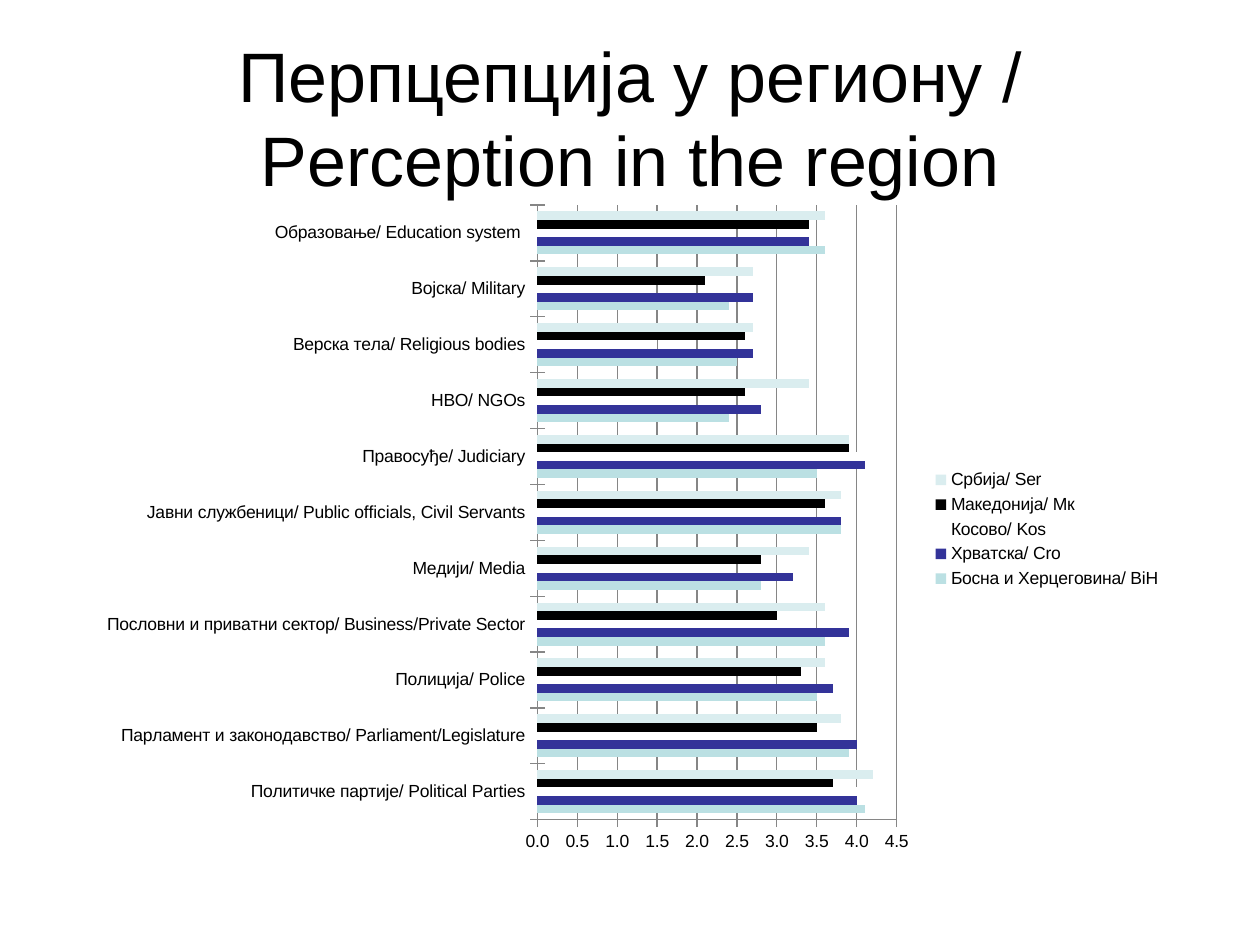
import pptx
import pptx.chart.data
import pptx.dml.color
import pptx.enum.chart
import pptx.enum.text
import pptx.oxml
import pptx.util

Pt = pptx.util.Pt
FONT = "Arial"
BLACK = "000000"
GRAY = "868686"

INSTITUTIONS = [
    "Политичке партије/ Political Parties",
    "Парламент и законодавство/ Parliament/Legislature",
    "Полиција/ Police",
    "Пословни и приватни сектор/ Business/Private Sector",
    "Mедији/ Media",
    "Јавни службеници/ Public officials, Civil Servants",
    "Правосуђе/ Judiciary",
    "НВО/ NGOs",
    "Верска тела/ Religious bodies",
    "Војска/ Military",
    "Образовање/ Education system ",
]
COUNTRIES = [
    ("Босна и Херцеговина/ BiH", "BBE0E3", [4.1, 3.9, 3.5, 3.6, 2.8, 3.8, 3.5, 2.4, 2.5, 2.4, 3.6]),
    ("Хрватска/ Cro", "333399", [4, 4, 3.7, 3.9, 3.2, 3.8, 4.1, 2.8, 2.7, 2.7, 3.4]),
    ("Косово/ Kos", "FFFFFF", [4.2, 3.9, 2.4, 3.3, 2.3, 3.2, 4.1, 1.8, 1.5, 1.3, 2.4]),
    ("Македонија/ Mк", "000000", [3.7, 3.5, 3.3, 3, 2.8, 3.6, 3.9, 2.6, 2.6, 2.1, 3.4]),
    ("Србија/ Ser", "DAEDEF", [4.2, 3.8, 3.6, 3.6, 3.4, 3.8, 3.9, 3.4, 2.7, 2.7, 3.6]),
]


def color(value):
    """Return the colour for a hex string."""
    return pptx.dml.color.RGBColor.from_string(value)


def style_font(font, size):
    """Set the shared typeface and colour at the given size."""
    font.name = FONT
    font.size = Pt(size)
    font.bold = False
    font.color.rgb = color(BLACK)


def add_title(page, left, top, width, height):
    """Place the centred slide title in the given box."""
    box = page.shapes.add_textbox(Pt(left), Pt(top), Pt(width), Pt(height))
    frame = box.text_frame
    frame.word_wrap = True
    frame.vertical_anchor = pptx.enum.text.MSO_ANCHOR.MIDDLE
    frame.text = "Перпцепција у региону / Perception in the region"
    para = frame.paragraphs[0]
    para.alignment = pptx.enum.text.PP_ALIGN.CENTER
    style_font(para.runs[0].font, 40)


def set_plot_layout(chart, x, y, width, height):
    """Fix the inner plot area as fractions of the chart box."""
    plot_area = chart.element.chart.plotArea
    for old in plot_area.xpath("c:layout"):
        plot_area.remove(old)
    sizes = zip("xywh", (x, y, width, height))
    parts = "".join(f'<c:{name} val="{size}"/>' for name, size in sizes)
    plot_area.insert(0, pptx.oxml.parse_xml(
        '<c:layout xmlns:c="http://schemas.openxmlformats.org/drawingml/2006/chart">'
        '<c:manualLayout><c:layoutTarget val="inner"/>'
        '<c:xMode val="edge"/><c:yMode val="edge"/>'
        f"{parts}</c:manualLayout></c:layout>"))


def add_perception_chart(page, left, top, width, height):
    """Place the clustered bar chart of institutions by country."""
    data = pptx.chart.data.CategoryChartData(number_format="0.0")
    data.categories = INSTITUTIONS
    for name, _, values in COUNTRIES:
        data.add_series(name, values)
    chart = page.shapes.add_chart(
        pptx.enum.chart.XL_CHART_TYPE.BAR_CLUSTERED,
        Pt(left), Pt(top), Pt(width), Pt(height), data).chart
    style_font(chart.font, 10)
    chart.has_title = False
    chart.has_legend = True
    chart.legend.position = pptx.enum.chart.XL_LEGEND_POSITION.RIGHT
    chart.legend.include_in_layout = False

    plot = chart.plots[0]
    plot.vary_by_categories = False
    plot.gap_width = 150
    for series, (_, fill, _) in zip(plot.series, COUNTRIES):
        series.format.fill.solid()
        series.format.fill.fore_color.rgb = color(fill)
        series.invert_if_negative = False

    scale = chart.value_axis
    scale.minimum_scale, scale.maximum_scale, scale.major_unit = 0, 4.5, 0.5
    scale.has_major_gridlines = True
    scale.tick_labels.number_format = "0.0"
    scale.tick_labels.number_format_is_linked = False
    for axis in (chart.category_axis, scale):
        axis.major_tick_mark = pptx.enum.chart.XL_TICK_MARK.CROSS
        axis.minor_tick_mark = pptx.enum.chart.XL_TICK_MARK.NONE
    for item in (chart.category_axis, scale, scale.major_gridlines):
        item.format.line.color.rgb = color(GRAY)
        item.format.line.width = Pt(0.75)
    set_plot_layout(chart, 0.415, 0.02, 0.33, 0.91)


def main():
    """Build and save the deck."""
    deck = pptx.Presentation()
    deck.slide_width, deck.slide_height = Pt(720), Pt(540)
    page = deck.slides.add_slide(deck.slide_layouts[6])
    add_title(page, 36, 21.6, 648, 90)
    add_perception_chart(page, 49, 109.5, 622, 386)
    deck.save("out.pptx")


if __name__ == "__main__":
    main()
